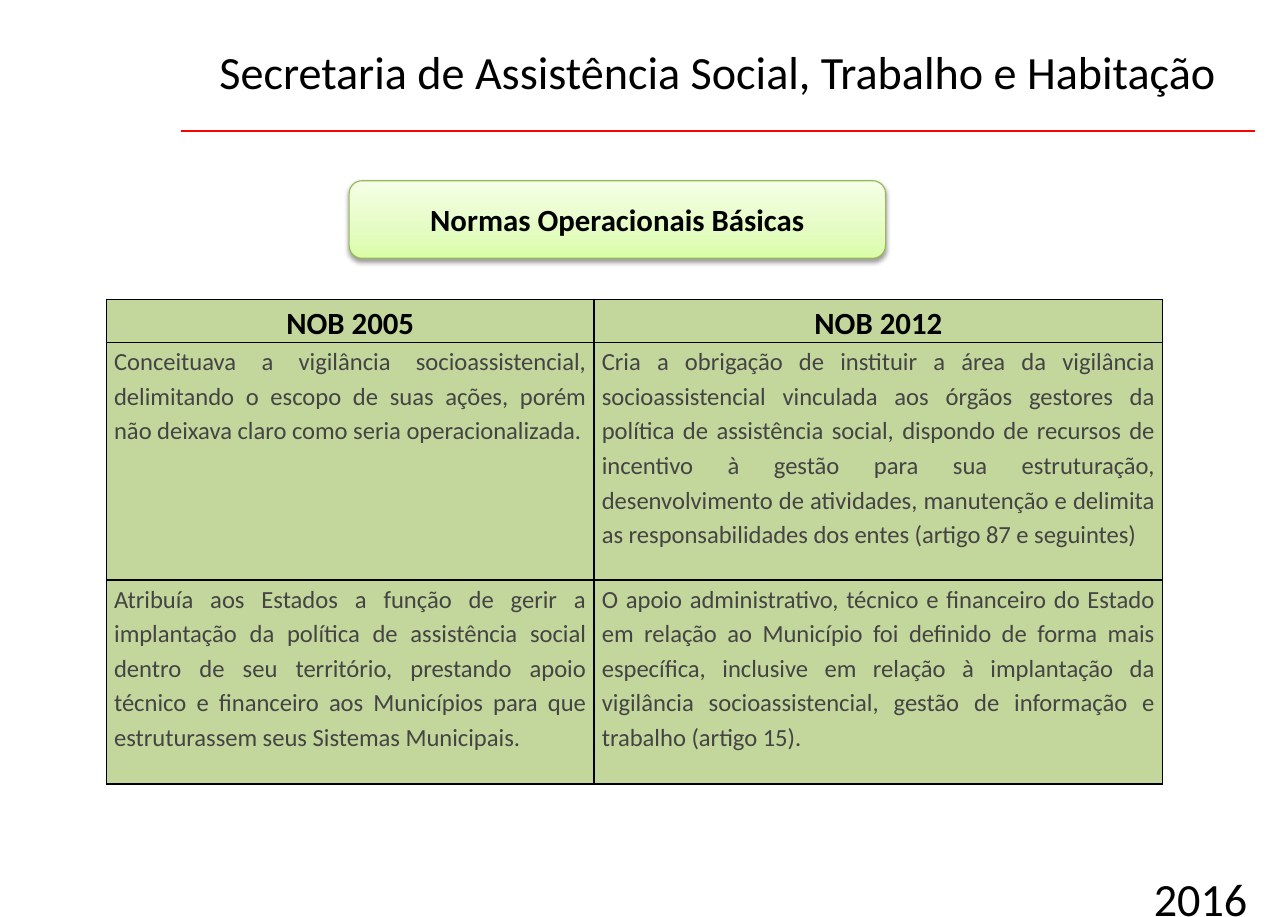
import copy

import pptx
import pptx.dml.color
import pptx.enum.shapes
import pptx.enum.text
import pptx.oxml
import pptx.oxml.ns
import pptx.util

Inches = pptx.util.Inches
Pt = pptx.util.Pt
ALIGN = pptx.enum.text.PP_ALIGN
ANCHOR = pptx.enum.text.MSO_ANCHOR
NS = pptx.oxml.ns.nsdecls("a")
COLORS = {
    "text": "000000", "body": "444444", "rule": "FF0000", "border": "000000",
    "cell": "C3D69B", "badge_line": "98B955", "shadow": "000000",
    "badge_low": "DAFDA7", "badge_mid": "E4FCC2", "badge_top": "F5FFE7",
}


def rgb(name):
    return pptx.dml.color.RGBColor.from_string(COLORS[name])


class Deck:
    font = "Calibri"

    def __init__(self, width, height):
        self.prs = pptx.Presentation()
        self.prs.slide_width = Inches(width)
        self.prs.slide_height = Inches(height)
        self.s = self.prs.slides.add_slide(self.prs.slide_layouts[5])

    def add_run(self, tf, text, size, color="text", bold=False, align=ALIGN.LEFT, spacing=1.0):
        p = tf.paragraphs[0]
        p.alignment = align
        p.line_spacing = spacing
        r = p.add_run()
        r.text = text
        r.font.name = self.font
        r.font.size = Pt(size)
        r.font.bold = bold
        r.font.color.rgb = rgb(color)

    def label(self, sp, text):
        tf = sp.text_frame
        tf.word_wrap = True
        tf.auto_size = pptx.enum.text.MSO_AUTO_SIZE.NONE
        tf.vertical_anchor = ANCHOR.TOP
        tf.margin_left = tf.margin_right = Inches(0.11)
        tf.margin_top = tf.margin_bottom = Inches(0.06)
        self.add_run(tf, text, 30)

    def title(self, text, x, y, w, h):
        sp = self.s.shapes.title
        sp.left, sp.top, sp.width, sp.height = map(Inches, (x, y, w, h))
        self.label(sp, text)

    def text(self, text, x, y, w, h):
        self.label(self.s.shapes.add_textbox(*map(Inches, (x, y, w, h))), text)

    def rule(self, x1, x2, y):
        straight = pptx.enum.shapes.MSO_CONNECTOR.STRAIGHT
        sp = self.s.shapes.add_connector(straight, *map(Inches, (x1, y, x2, y)))
        sp.line.color.rgb = rgb("rule")
        sp.line.width = Pt(1.5)
        sp._element.spPr.append(pptx.oxml.parse_xml(f"<a:effectLst {NS}/>"))

    def badge(self, text, x, y, w, h):
        kind = pptx.enum.shapes.MSO_SHAPE.ROUNDED_RECTANGLE
        sp = self.s.shapes.add_shape(kind, *map(Inches, (x, y, w, h)))
        sp.fill.gradient()
        sp.fill.gradient_angle = 90
        stops = sp._element.spPr.find(".//" + pptx.oxml.ns.qn("a:gsLst"))
        stops.append(copy.deepcopy(stops[-1]))
        shades = (("badge_low", 0), ("badge_mid", 0.35), ("badge_top", 1))
        for stop, (color, position) in zip(sp.fill.gradient_stops, shades):
            stop.color.rgb = rgb(color)
            stop.position = position
        sp.line.color.rgb = rgb("badge_line")
        sp.line.width = Pt(0.75)
        sp.shadow.inherit = False
        effects = sp._element.spPr.find(pptx.oxml.ns.qn("a:effectLst"))
        effects.append(pptx.oxml.parse_xml(
            f'<a:outerShdw {NS} blurRad="{Pt(3.1)}" dist="{Pt(1.6)}" dir="5400000" rotWithShape="0">'
            f'<a:srgbClr val="{COLORS["shadow"]}"><a:alpha val="38000"/></a:srgbClr></a:outerShdw>'))
        sp.text_frame.word_wrap = True
        sp.text_frame.vertical_anchor = ANCHOR.MIDDLE
        self.add_run(sp.text_frame, text, 20, bold=True, align=ALIGN.CENTER)

    def cell(self, cell, text, header):
        cell.margin_left = cell.margin_right = Inches(0.07)
        cell.margin_top = cell.margin_bottom = 0
        for side in "LRTB":
            cell._tc.get_or_add_tcPr().append(pptx.oxml.parse_xml(
                f'<a:ln{side} {NS} w="{Pt(1)}"><a:solidFill>'
                f'<a:srgbClr val="{COLORS["border"]}"/></a:solidFill></a:ln{side}>'))
        cell.fill.solid()
        cell.fill.fore_color.rgb = rgb("cell")
        if header:
            self.add_run(cell.text_frame, text, 20, bold=True, align=ALIGN.CENTER, spacing=1.15)
        else:
            self.add_run(cell.text_frame, text, 16, "body", align=ALIGN.JUSTIFY, spacing=1.15)

    def table(self, rows, x, y, widths, heights):
        frame = self.s.shapes.add_table(
            len(rows), len(widths), *map(Inches, (x, y, sum(widths), sum(heights))))
        table = frame.table
        for column, width in zip(table.columns, widths):
            column.width = Inches(width)
        for i, (row, height) in enumerate(zip(rows, heights)):
            table.rows[i].height = Inches(height)
            for j, text in enumerate(row):
                self.cell(table.cell(i, j), text, header=i == 0)


NORMS = [
    ("NOB 2005", "NOB 2012"),
    ("Conceituava a vigilância socioassistencial, delimitando o escopo de suas ações, "
     "porém não deixava claro como seria operacionalizada.",
     "Cria a obrigação de instituir a área da vigilância socioassistencial vinculada aos "
     "órgãos gestores da política de assistência social, dispondo de recursos de incentivo "
     "à gestão para sua estruturação, desenvolvimento de atividades, manutenção e delimita "
     "as responsabilidades dos entes (artigo 87 e seguintes)"),
    ("Atribuía aos Estados a função de gerir a implantação da política de assistência "
     "social dentro de seu território, prestando apoio técnico e financeiro aos Municípios "
     "para que estruturassem seus Sistemas Municipais.",
     "O apoio administrativo, técnico e financeiro do Estado em relação ao Município foi "
     "definido de forma mais específica, inclusive em relação à implantação da vigilância "
     "socioassistencial, gestão de informação e trabalho (artigo 15)."),
]


def main():
    deck = Deck(11.62, 8.27)
    deck.rule(1.63, 11.32, 1.18)
    deck.title("Secretaria de Assistência Social, Trabalho e Habitação", 1.87, 0.33, 9.42, 0.62)
    deck.text("2016", 10.3, 7.79, 1.3, 0.48)
    deck.table(NORMS, 0.96, 2.7, widths=(4.4, 5.13), heights=(0.39, 2.14, 1.84))
    deck.badge("Normas Operacionais Básicas", 3.15, 1.63, 4.84, 0.7)
    deck.prs.save("out.pptx")


if __name__ == "__main__":
    main()
